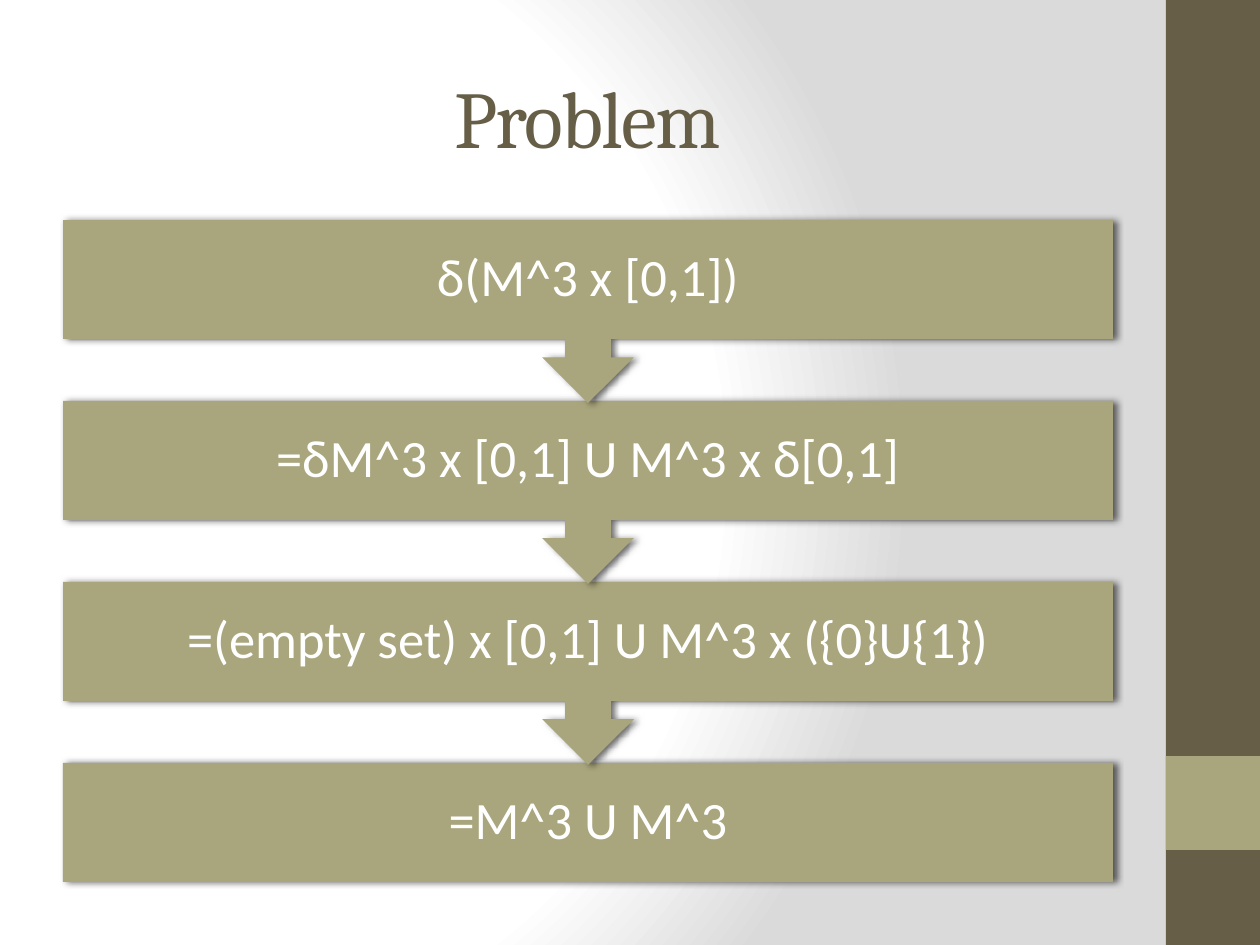
from lxml import etree
from pptx import Presentation
from pptx.dml.color import RGBColor
from pptx.enum.shapes import MSO_SHAPE
from pptx.enum.text import MSO_ANCHOR, PP_ALIGN
from pptx.oxml import parse_xml
from pptx.oxml.ns import qn
from pptx.util import Emu, Pt

RECTANGLE = MSO_SHAPE.RECTANGLE
CALLOUT = MSO_SHAPE.UP_ARROW_CALLOUT
CENTER = PP_ALIGN.CENTER
MIDDLE = MSO_ANCHOR.MIDDLE

PX = 914400 // 126
NAMESPACE = 'xmlns:a="http://schemas.openxmlformats.org/drawingml/2006/main"'
BROWN, OLIVE, WHITE = "675E47", "A9A57C", "FFFFFF"

STEPS = [
    "δ(M^3 x [0,1])",
    "=δM^3 x [0,1] U M^3 x δ[0,1]",
    "=(empty set) x [0,1] U M^3 x ({0}U{1})",
    "=M^3 U M^3",
]
LEFT, WIDTH = 63, 1050
STEP_TOP, STEP_PITCH = 220, 181
BAR_HEIGHT, CALLOUT_HEIGHT = 119, 183


def px(*lengths):
    return [Emu(length * PX) for length in lengths]


def color(value):
    return RGBColor.from_string(value)


def paint_background(page):
    page.background.fill.gradient()
    gradient = page._element.find(".//" + qn("a:gradFill"))
    stops = "".join(
        f'<a:gs pos="{position * 1000}"><a:srgbClr val="{value}"/></a:gs>'
        for position, value in [(0, WHITE), (75, WHITE), (100, "DADADA")]
    )
    radial = parse_xml(
        f'<a:gradFill {NAMESPACE} rotWithShape="1"><a:gsLst>{stops}</a:gsLst>'
        '<a:path path="circle"><a:fillToRect l="20000" t="50000" r="100000" b="50000"/>'
        "</a:path></a:gradFill>"
    )
    gradient.getparent().replace(gradient, radial)


def add_block(page, kind, bounds, fill, rotation=0, shadow=False):
    block = page.shapes.add_shape(kind, *px(*bounds))
    block.rotation = rotation
    block.fill.solid()
    block.fill.fore_color.rgb = color(fill)
    block.line.fill.background()
    block.shadow.inherit = False
    if shadow:
        add_shadow(block)


def add_shadow(block):
    effects = block._element.spPr.find(qn("a:effectLst"))
    outer = etree.SubElement(
        effects, qn("a:outerShdw"),
        blurRad=str(Pt(4)), dist=str(Pt(2)), dir="0", rotWithShape="0",
    )
    black = etree.SubElement(outer, qn("a:srgbClr"), val="000000")
    etree.SubElement(black, qn("a:alpha"), val="60000")


def add_text(page, text, bounds, font, size, fill, inset=12, line_spacing=1.0, tracking=0):
    box = page.shapes.add_textbox(*px(*bounds))
    frame = box.text_frame
    frame.word_wrap = True
    frame.vertical_anchor = MIDDLE
    frame.margin_left, frame.margin_right, frame.margin_top, frame.margin_bottom = px(*[inset] * 4)
    para = frame.paragraphs[0]
    para.alignment = CENTER
    para.line_spacing = line_spacing
    span = para.add_run()
    span.text = text
    span.font.name = font
    span.font.size = Pt(size)
    span.font.color.rgb = color(fill)
    if tracking:
        span.font._element.set("spc", str(tracking * 100))


def add_step(page, text, top, is_last):
    bar = (LEFT, top, WIDTH, BAR_HEIGHT)
    if is_last:
        add_block(page, RECTANGLE, bar, OLIVE, shadow=True)
    else:
        callout = (LEFT, top, WIDTH, CALLOUT_HEIGHT)
        add_block(page, CALLOUT, callout, OLIVE, rotation=180, shadow=True)
    add_text(page, text, bar, "Calibri", 30, WHITE, inset=29, line_spacing=0.9)


def main():
    deck = Presentation()
    deck.slide_width, deck.slide_height = px(1260, 945)
    page = deck.slides.add_slide(deck.slide_layouts[6])
    paint_background(page)
    add_block(page, RECTANGLE, (1166, 0, 94, 945), BROWN)
    add_block(page, RECTANGLE, (1166, 756, 94, 94), OLIVE)
    add_text(page, "Problem", (LEFT, 38, WIDTH, 157), "Cambria", 46, BROWN, tracking=-1)
    last = len(STEPS) - 1
    for index, text in reversed(list(enumerate(STEPS))):
        add_step(page, text, STEP_TOP + index * STEP_PITCH, index == last)
    deck.save("out.pptx")


if __name__ == "__main__":
    main()
